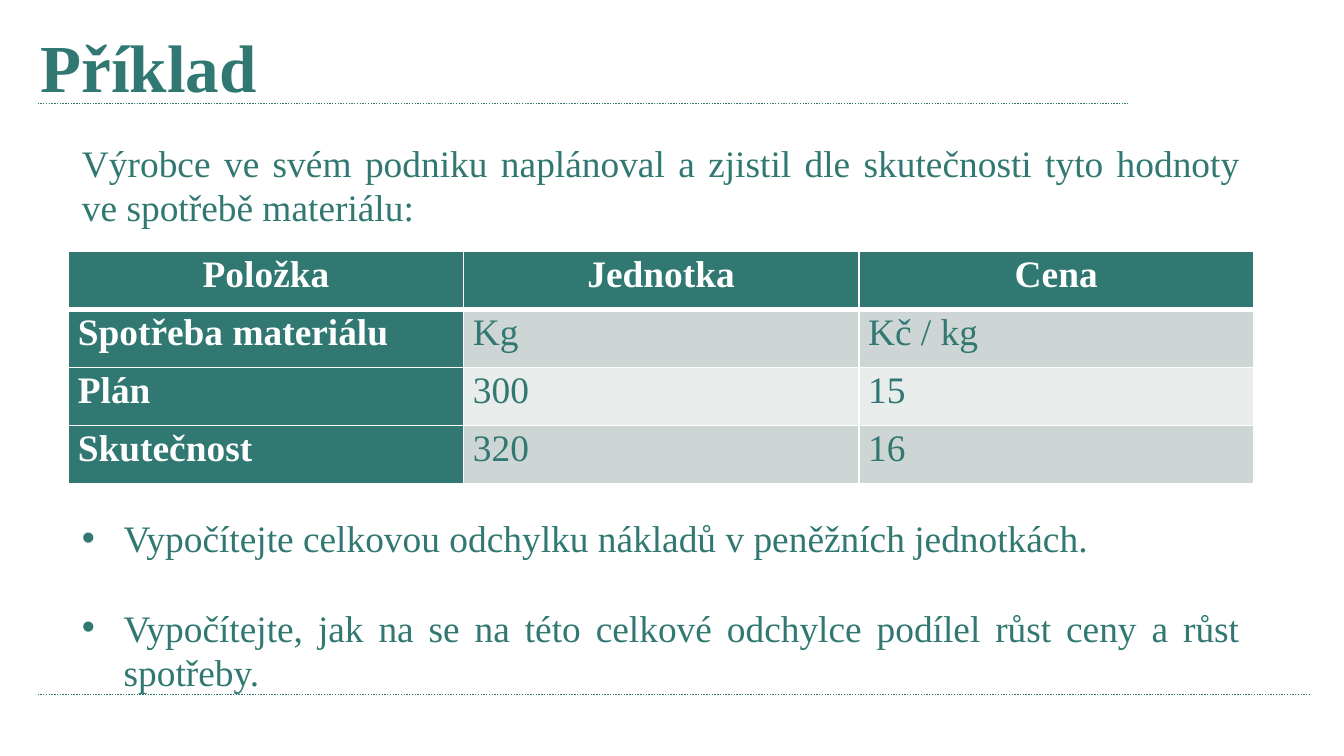
from dataclasses import dataclass

from lxml import etree
from pptx import Presentation
from pptx import util as u
from pptx.dml.color import RGBColor
from pptx.enum import dml, shapes, text
from pptx.oxml.ns import qn


@dataclass(frozen=True)
class Theme:
    font: str = "Times New Roman"
    green: str = "307871"
    white: str = "FFFFFF"
    bands: tuple = ("CDD6D5", "E8ECEB")
    title_size: int = 36
    body_size: int = 20


class SlideBuilder:
    def __init__(self, slide, theme):
        self.slide = slide
        self.theme = theme

    def style(self, paragraph, color, size=None, bold=False):
        font = paragraph.font
        font.name = self.theme.font
        font.size = u.Pt(size or self.theme.body_size)
        font.bold = bold
        font.color.rgb = RGBColor.from_string(color)

    def place(self, shape, left, top, width, height):
        shape.left, shape.top = u.Inches(left), u.Inches(top)
        shape.width, shape.height = u.Inches(width), u.Inches(height)

    def rule(self, left, right, top):
        line = self.slide.shapes.add_connector(
            shapes.MSO_CONNECTOR.STRAIGHT,
            u.Inches(left), u.Inches(top), u.Inches(right), u.Inches(top))
        line.line.color.rgb = RGBColor.from_string(self.theme.green)
        line.line.width = u.Pt(0.75)
        line.line.dash_style = dml.MSO_LINE.ROUND_DOT
        etree.SubElement(line._element.spPr, qn("a:effectLst"))

    def title(self, wording, *box):
        shape = self.slide.shapes.title
        self.place(shape, *box)
        frame = shape.text_frame
        frame.text = wording
        frame.auto_size = text.MSO_AUTO_SIZE.NONE
        frame.vertical_anchor = text.MSO_ANCHOR.TOP
        paragraph = frame.paragraphs[0]
        paragraph.alignment = text.PP_ALIGN.LEFT
        self.style(paragraph, self.theme.green, self.theme.title_size, True)

    def body(self, items, *box):
        """Each item is (wording, bulleted, points of space before)."""
        shape = self.slide.placeholders[1]
        self.place(shape, *box)
        frame = shape.text_frame
        frame.text = "\n".join(wording for wording, _, _ in items)
        frame.auto_size = text.MSO_AUTO_SIZE.NONE
        for paragraph, (_, bulleted, space) in zip(frame.paragraphs, items):
            paragraph.alignment = text.PP_ALIGN.JUSTIFY
            paragraph.space_before = u.Pt(space)
            properties = paragraph._p.get_or_add_pPr()
            indent = u.Inches(0.31) if bulleted else 0
            properties.set("marL", str(indent))
            properties.set("indent", str(-indent))
            if bulleted:
                etree.SubElement(properties, qn("a:buFont"), typeface="Arial")
                etree.SubElement(properties, qn("a:buChar"), char="•")
            else:
                etree.SubElement(properties, qn("a:buNone"))
            self.style(paragraph, self.theme.green)

    def border(self, cell, **widths):
        properties = cell._tc.get_or_add_tcPr()
        for side in "LRTB":
            line = etree.SubElement(properties, qn(f"a:ln{side}"),
                                    w=str(u.Pt(widths.get(side, 1))))
            fill = etree.SubElement(line, qn("a:solidFill"))
            etree.SubElement(fill, qn("a:srgbClr"), val=self.theme.white)

    def table(self, rows, *box):
        table = self.slide.shapes.add_table(
            len(rows), len(rows[0]), *map(u.Inches, box)).table
        for r, row in enumerate(rows):
            for c, wording in enumerate(row):
                cell = table.cell(r, c)
                heading = r == 0 or c == 0
                # Thick rule between the header row and the data
                self.border(cell, T=3 if r == 1 else 1, B=3 if r == 0 else 1)
                cell.fill.solid()
                cell.fill.fore_color.rgb = RGBColor.from_string(
                    self.theme.green if heading else self.theme.bands[(r - 1) % 2])
                cell.margin_left = cell.margin_right = u.Inches(0.07)
                cell.margin_top = cell.margin_bottom = 0
                cell.text = wording
                paragraph = cell.text_frame.paragraphs[0]
                paragraph.line_spacing = 1.07
                paragraph.alignment = (text.PP_ALIGN.CENTER if r == 0
                                       else text.PP_ALIGN.LEFT)
                self.style(paragraph,
                           self.theme.white if heading else self.theme.green,
                           bold=heading)


def main():
    presentation = Presentation()
    presentation.slide_width = u.Inches(10)
    presentation.slide_height = u.Inches(10 * 9 / 16)
    slide = presentation.slides.add_slide(presentation.slide_layouts[1])
    builder = SlideBuilder(slide, Theme())

    # Dotted rules under the title and above the footer
    builder.rule(0.28, 8.39, 0.77)
    builder.rule(0.28, 9.75, 5.17)

    # Title, then the task text with room left for the table
    builder.title("Příklad", 0.2, 0.14, 8.82, 0.79)
    builder.body([
        ("Výrobce ve svém podniku naplánoval a zjistil dle skutečnosti "
         "tyto hodnoty ve spotřebě materiálu:", False, 0),
        ("Vypočítejte celkovou odchylku nákladů v peněžních jednotkách.", True, 153),
        ("Vypočítejte, jak na se na této celkové odchylce podílel růst ceny "
         "a růst spotřeby.", True, 24),
    ], 0.51, 0.99, 8.82, 5.18)

    # Planned and actual values
    builder.table([
        ("Položka", "Jednotka", "Cena"),
        ("Spotřeba materiálu", "Kg", "Kč / kg"),
        ("Plán", "300", "15"),
        ("Skutečnost", "320", "16"),
    ], 0.51, 1.87, 8.82, 1.73)

    presentation.save("out.pptx")


if __name__ == "__main__":
    main()
